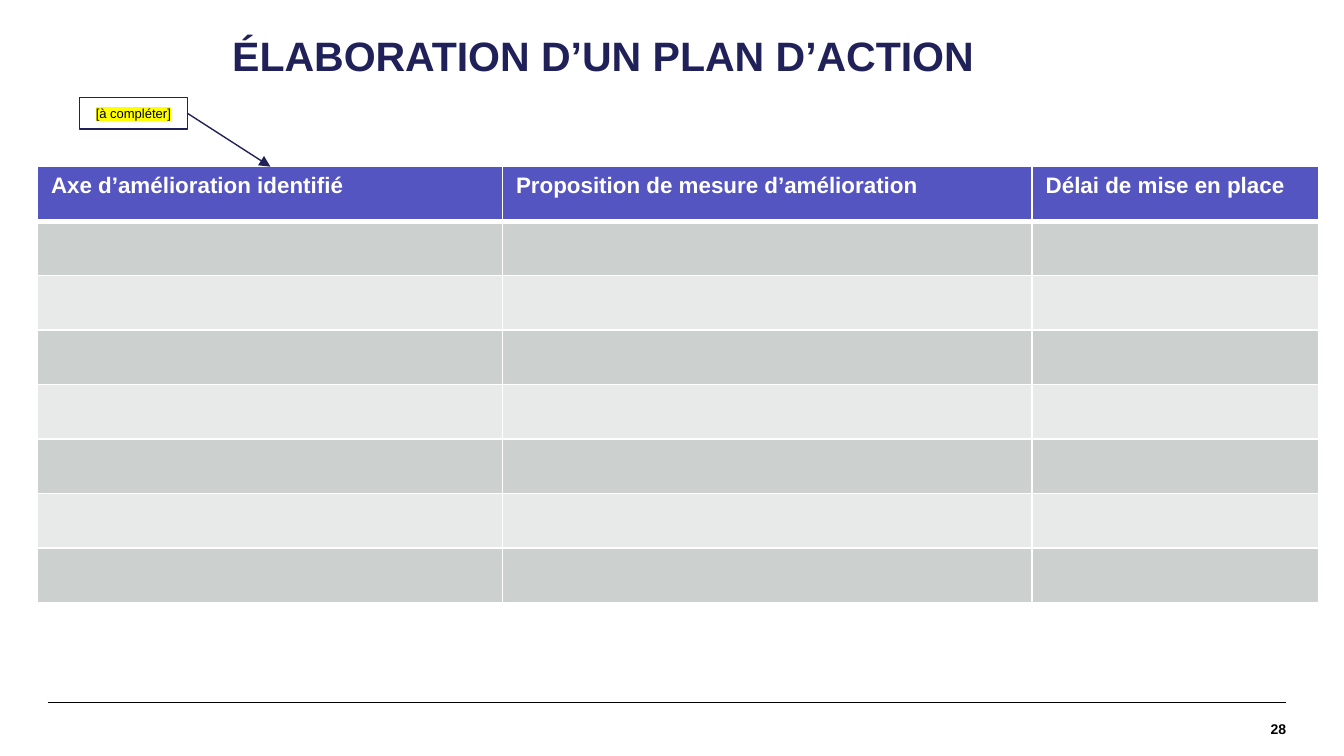
from lxml.etree import SubElement
from pptx import Presentation
from pptx.dml.color import RGBColor as RGB
from pptx.enum.shapes import MSO_CONNECTOR as LINK, MSO_SHAPE as FORM
from pptx.enum.text import MSO_ANCHOR as ANCHOR, PP_ALIGN as ALIGN
from pptx.oxml import parse_xml
from pptx.oxml.ns import nsdecls, qn
from pptx.util import Cm, Pt

NAVY = RGB(0x21, 0x21, 0x5A)
VIOLET = RGB(0x55, 0x55, 0xC1)
DARK = RGB(0xCC, 0xD1, 0xCF)
LIGHT = RGB(0xE7, 0xEA, 0xE9)
WHITE = RGB(0xFF, 0xFF, 0xFF)
BLACK = RGB(0, 0, 0)
YELLOW = RGB(0xFF, 0xFF, 0)

HEADS = ["Axe d’amélioration identifié", "Proposition de mesure d’amélioration",
         "Délai de mise en place"]
WIDTHS = [8.79, 10.01, 5.41]
ROWS = 8


def add_run(para, text, size, color, bold=False):
    run = para.add_run()
    run.text = text
    font = run.font
    font.name, font.size, font.bold = "Arial", Pt(size), bold
    font.color.rgb = color
    return run


def add_line(slide, start, end, color, width):
    line = slide.shapes.add_connector(
        LINK.STRAIGHT, *[Cm(v) for v in (*start, *end)])
    line.line.color.rgb = color
    line.line.width = Pt(width)
    SubElement(line._element.spPr, qn("a:effectLst"))
    return line


def add_text(slide, box):
    shape = slide.shapes.add_textbox(*[Cm(v) for v in box])
    frame = shape.text_frame
    frame.word_wrap = True
    frame.vertical_anchor = ANCHOR.MIDDLE
    return frame


def add_title(slide, box):
    para = add_text(slide, box).paragraphs[0]
    para.line_spacing = 0.9
    para._p.get_or_add_pPr().set("marL", str(Cm(0.05)))
    add_run(para, "ÉLABORATION D’UN PLAN D’ACTION", 22, NAVY, True)


def edge_cell(cell, top, bottom):
    sides = [("lnL", 1), ("lnR", 1), ("lnT", top), ("lnB", bottom)]
    for spot, (side, width) in enumerate(sides):
        edge = parse_xml(
            f'<a:{side} {nsdecls("a")} w="{Pt(width)}"><a:solidFill>'
            f'<a:srgbClr val="{WHITE}"/></a:solidFill></a:{side}>')
        cell._tc.get_or_add_tcPr().insert(spot, edge)


def add_plan(slide, box):
    frame = slide.shapes.add_table(ROWS, len(HEADS), *[Cm(v) for v in box])
    table = frame.table
    for col, width in zip(table.columns, WIDTHS):
        col.width = Cm(width)
    for i, row in enumerate(table.rows):
        row.height = Cm(box[3] / ROWS)
        for j, cell in enumerate(row.cells):
            cell.fill.solid()
            cell.fill.fore_color.rgb = (
                VIOLET if i == 0 else DARK if i % 2 else LIGHT)
            # Thick rule between the header and the body
            edge_cell(cell, 3 if i == 1 else 1, 3 if i == 0 else 1)
            if i == 0:
                add_run(cell.text_frame.paragraphs[0], HEADS[j], 12, WHITE, True)


def add_note(slide, box, target):
    left, top, width, height = box
    shape = slide.shapes.add_shape(FORM.RECTANGLE, *[Cm(v) for v in box])
    shape.shadow.inherit = False
    shape.fill.background()
    shape.line.color.rgb = NAVY
    shape.line.width = Pt(0.75)
    frame = shape.text_frame
    frame.word_wrap = True
    frame.vertical_anchor = ANCHOR.MIDDLE
    para = frame.paragraphs[0]
    para.alignment = ALIGN.CENTER
    run = add_run(para, "[à compléter]", 7, BLACK)
    # Highlight follows the text fill
    run._r.rPr.find(qn("a:solidFill")).addnext(parse_xml(
        f'<a:highlight {nsdecls("a")}><a:srgbClr val="{YELLOW}"/></a:highlight>'))
    # Arrow to the table
    arrow = add_line(slide, (left + width, top + height / 2), target, NAVY, 0.75)
    SubElement(arrow.line._get_or_add_ln(), qn("a:tailEnd"), type="triangle")


def add_foot(slide, box):
    left, top, width, height = box
    add_line(slide, (left, top), (left + width, top), BLACK, 0.8)
    # Page number
    wide = 3.76
    frame = add_text(slide, (left + width - wide, top, wide, height))
    frame.margin_left = frame.margin_right = 0
    frame.margin_top = frame.margin_bottom = 0
    para = frame.paragraphs[0]
    para.alignment = ALIGN.RIGHT
    add_run(para, "28", 7.5, BLACK, True)


def main():
    deck = Presentation()
    deck.slide_width, deck.slide_height = Cm(25.4), Cm(14.29)
    slide = deck.slides.add_slide(deck.slide_layouts[6])
    add_foot(slide, (0.9, 13.28, 23.41, 1))
    add_title(slide, (4.09, 0.25, 21.3, 1.7))
    add_plan(slide, (0.71, 3.15, sum(WIDTHS), 8.24))
    add_note(slide, (1.5, 1.84, 2.04, 0.6), (5.11, 3.15))
    deck.save("out.pptx")


if __name__ == "__main__":
    main()
